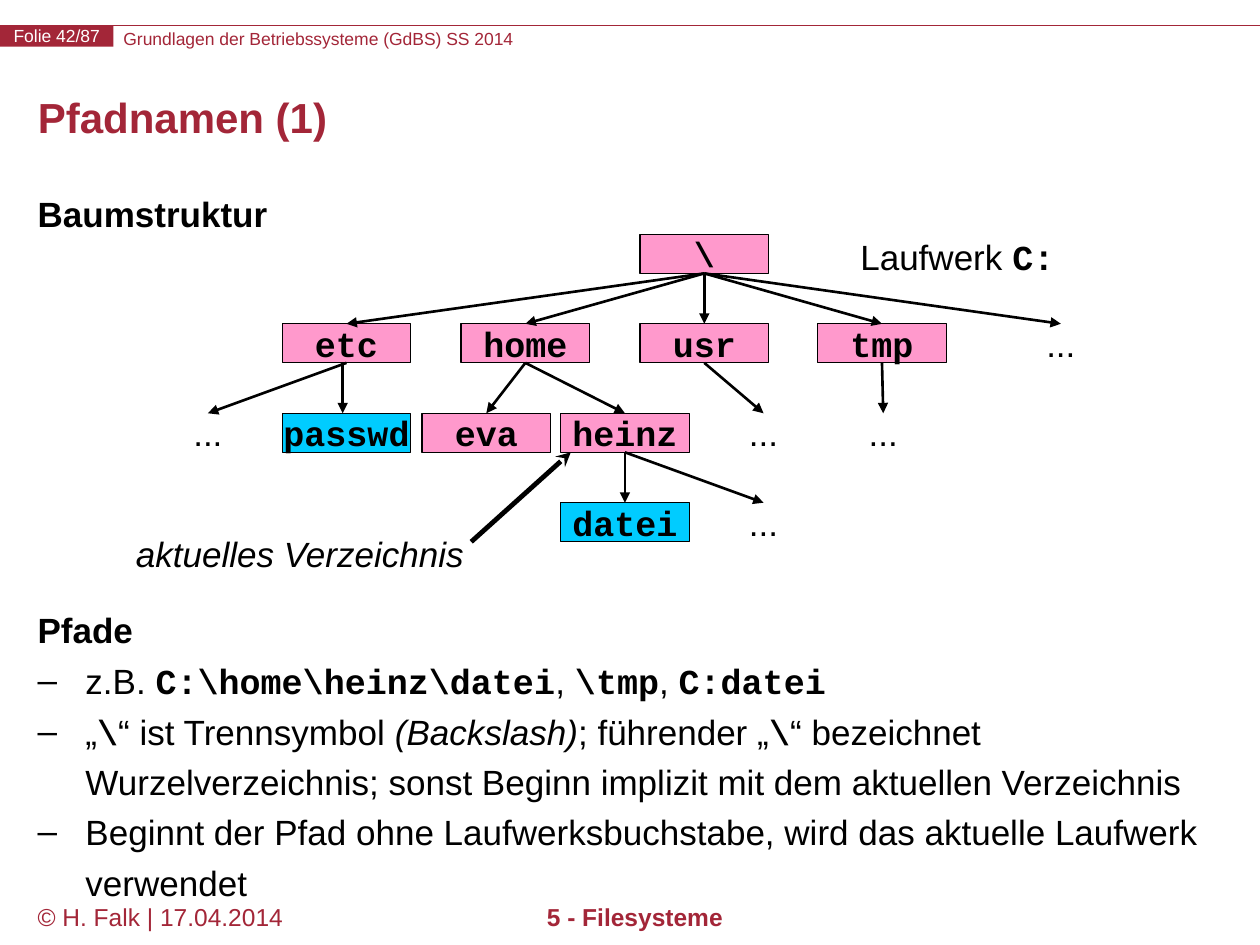
from dataclasses import dataclass

from lxml import etree
from pptx import Presentation
from pptx.dml.color import RGBColor
from pptx.enum.shapes import MSO_CONNECTOR, MSO_SHAPE
from pptx.enum.text import MSO_ANCHOR as Anchor, MSO_AUTO_SIZE as AutoSize, PP_ALIGN as Align
from pptx.oxml.ns import qn
from pptx.util import Emu, Pt

PX = 9144  # 100 px to the inch
SANS, MONO = "Arial", "Courier New"
RED, BLACK, WHITE = "A32638", "000000", "FFFFFF"
PINK, BLUE = "FF99CC", "00CCFF"
NODE_W, NODE_H = 102, 31
TREE_TOP, LEVEL_STEP = 186, 71
BOTTOM, TOP = 2, 0


@dataclass(frozen=True)
class Node:
    key: str
    left: int
    level: int
    parent: str = ""
    fill: str = PINK
    label: str = ""
    joined: bool = True


@dataclass(frozen=True)
class Run:
    text: str
    font: str = SANS
    bold: bool = False
    italic: bool = False


def code(text: str) -> Run:
    return Run(text, font=MONO, bold=True)


def px(*lengths: int) -> list[Emu]:
    return [Emu(length * PX) for length in lengths]


def rgb(color: str) -> RGBColor:
    return RGBColor.from_string(color)


def write(paragraph, *runs: Run, size: int = 20, color: str = BLACK, align=Align.LEFT,
          spacing=None) -> None:
    paragraph.alignment = align
    if spacing is not None:
        paragraph.line_spacing = spacing
    for part in runs:
        run = paragraph.add_run()
        run.text = part.text
        font = run.font
        font.name, font.size = part.font, Pt(size)
        font.bold, font.italic = part.bold, part.italic
        font.color.rgb = rgb(color)


def set_insets(frame, inset: int) -> None:
    frame.margin_left = frame.margin_right = frame.margin_top = frame.margin_bottom = inset


def add_text(slide, box: tuple[int, int, int, int], *runs: Run, wrap: bool = True,
             anchor=Anchor.TOP, grow: bool = False, **style):
    label = slide.shapes.add_textbox(*px(*box))
    frame = label.text_frame
    frame.word_wrap, frame.vertical_anchor = wrap, anchor
    frame.auto_size = AutoSize.SHAPE_TO_FIT_TEXT if grow else AutoSize.NONE
    write(frame.paragraphs[0], *runs, **style)
    return label


def add_box(slide, box: tuple[int, int, int, int], run: Run, fill: str, outline: str = "",
            **style):
    rect = slide.shapes.add_shape(MSO_SHAPE.RECTANGLE, *px(*box))
    rect.shadow.inherit = False
    rect.fill.solid()
    rect.fill.fore_color.rgb = rgb(fill)
    if outline:
        rect.line.color.rgb = rgb(outline)
        rect.line.width = Pt(0.75)
    else:
        rect.line.fill.background()
    frame = rect.text_frame
    frame.word_wrap, frame.vertical_anchor = False, Anchor.MIDDLE
    write(frame.paragraphs[0], run, align=Align.CENTER, **style)
    return rect


def add_line(slide, ends: tuple[int, int, int, int], color: str = BLACK,
             width: float = 1.5, head: str = "triangle"):
    line = slide.shapes.add_connector(MSO_CONNECTOR.STRAIGHT, *px(*ends))
    line.line.color.rgb = rgb(color)
    line.line.width = Pt(width)
    if head:
        etree.SubElement(line.line._get_or_add_ln(), qn("a:tailEnd"), type=head)
    etree.SubElement(line._element.spPr, qn("a:effectLst"))
    return line


def set_indent(paragraph, bullet: str = "") -> None:
    properties = paragraph._p.get_or_add_pPr()
    properties.set("marL", str(38 * PX))
    properties.set("indent", str(-38 * PX))
    if bullet:
        etree.SubElement(properties, qn("a:buFont"), typeface=SANS)
        etree.SubElement(properties, qn("a:buChar"), char=bullet)


def add_tree(slide, nodes: list[Node]) -> None:
    drawn = {}
    for node in nodes:
        top = TREE_TOP + node.level * LEVEL_STEP
        box = (node.left, top, NODE_W, NODE_H)
        if node.label:
            drawn[node.key] = add_text(slide, box, Run(node.label), wrap=False,
                                       anchor=Anchor.MIDDLE, align=Align.CENTER)
        else:
            drawn[node.key] = add_box(slide, box, code(node.key), node.fill, BLACK)
        if node.parent and node.joined:
            branch = add_line(slide, (0, 0, 0, 0))
            branch.begin_connect(drawn[node.parent], BOTTOM)
            branch.end_connect(drawn[node.key], TOP)


TREE = [
    Node("\\", 508, 0),
    Node("etc", 224, 1, "\\"),
    Node("home", 366, 1, "\\"),
    Node("usr", 508, 1, "\\"),
    Node("tmp", 649, 1, "\\"),
    Node("more roots", 791, 1, "\\", label="..."),
    Node("more etc", 114, 2, "etc", label="..."),
    Node("passwd", 224, 2, "etc", BLUE, joined=False),
    Node("eva", 335, 2, "home"),
    Node("heinz", 445, 2, "home"),
    Node("more usr", 555, 2, "usr", label="..."),
    Node("more tmp", 650, 2, "tmp", label="..."),
    Node("datei", 445, 3, "heinz", BLUE),
    Node("more heinz", 555, 3, "heinz", label="..."),
]

PATH_RULES = [
    [Run("z.B. "), code("C:\\home\\heinz\\datei"), Run(", "), code("\\tmp"), Run(", "),
     code("C:datei")],
    [Run("„"), code("\\"), Run("“ ist Trennsymbol "), Run("(Backslash)", italic=True),
     Run("; führender „"), code("\\"),
     Run("“ bezeichnet Wurzelverzeichnis; sonst Beginn implizit mit dem aktuellen Verzeichnis")],
    [Run("Beginnt der Pfad ohne Laufwerksbuchstabe, wird das aktuelle Laufwerk verwendet")],
]


def main() -> None:
    deck = Presentation()
    deck.slide_width, deck.slide_height = px(1000, 750)
    slide = deck.slides.add_slide(deck.slide_layouts[5])

    # Header and footer
    add_line(slide, (0, 20, 1000, 20), RED, 0.75, head="")
    course = add_text(slide, (98, 22, 660, 17),
                      Run("Grundlagen der Betriebssysteme (GdBS) SS 2014"), size=10, color=RED)
    folio = add_box(slide, (0, 20, 90, 17), Run("Folie 42/87"), RED, size=10, color=WHITE)
    for header in (course, folio):
        set_insets(header.text_frame, 0)
    add_text(slide, (20, 711, 220, 39), Run("© H. Falk | 17.04.2014"), size=14, color=RED)
    add_text(slide, (201, 711, 606, 39), Run("5 - Filesysteme", bold=True),
             size=14, color=RED, align=Align.CENTER)

    # Title
    title = slide.shapes.title
    title.left, title.top, title.width, title.height = px(20, 60, 961, 72)
    title.text_frame.vertical_anchor = Anchor.MIDDLE
    title.text_frame.auto_size = AutoSize.NONE
    write(title.text_frame.paragraphs[0], Run("Pfadnamen (1)", bold=True),
          size=24, color=RED, spacing=Pt(24))

    # Headings and path rules, with room for the tree between them
    body = add_text(slide, (20, 152, 961, 546), Run("Baumstruktur", bold=True), spacing=0.9)
    paths = body.text_frame.add_paragraph()
    write(paths, Run("Pfade", bold=True), spacing=0.9)
    paths.space_before = Pt(216)
    for rule in PATH_RULES:
        paragraph = body.text_frame.add_paragraph()
        set_indent(paragraph, "–")
        write(paragraph, *rule, spacing=1.2)

    # Directory tree
    add_tree(slide, TREE)
    add_line(slide, (272, 288, 272, 328))  # etc to passwd, left of centre

    # Notes beside the tree
    add_text(slide, (98, 418, 281, 43), Run("aktuelles Verzeichnis", italic=True),
             wrap=False, grow=True)
    add_line(slide, (374, 430, 453, 359), width=2.75, head="stealth")
    add_text(slide, (673, 182, 174, 43), Run("Laufwerk "), code("C:"), wrap=False, grow=True)

    deck.save("out.pptx")


if __name__ == "__main__":
    main()
